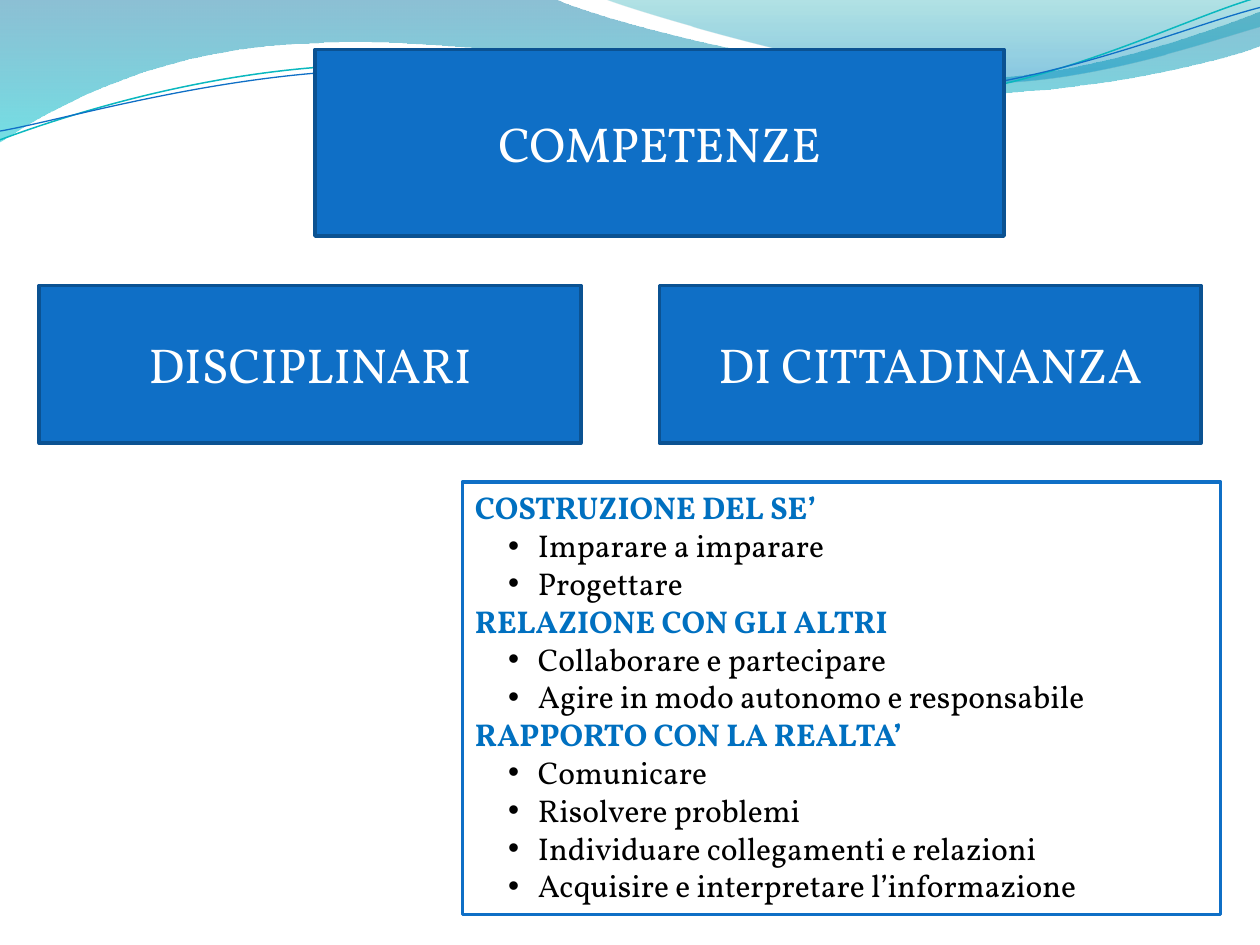
"""Build a slide that splits competences into two groups and lists the second."""
from math import cos, radians, sin
from lxml.etree import SubElement
from pptx import Presentation
from pptx.dml.color import RGBColor
from pptx.enum.shapes import MSO_SHAPE
from pptx.enum.text import MSO_ANCHOR, MSO_AUTO_SIZE, PP_ALIGN
from pptx.oxml.ns import qn
from pptx.util import Pt

FONT = "Vollkorn"
TILT = 2.7
HUES = {
    "blue": "0F6FC6", "edge": "0B5292", "head": "0070C0", "teal": "0AB8BF",
    "sea": "0074A1", "aqua": "00C6CF", "green": "00A1A9", "sky": "008BBF",
    "white": "FFFFFF", "black": "000000",
}
# Two numbers make a straight step, six make a Bezier curve.
WAVES = [
    ([(0, 0), (316.8, -0.7), (342.7, 12.2, 478.1, 45.4, 545.8, 45.4),
      (614.2, 45.4, 689.8, 18.7, 720, 6.5), (720.7, 25.9),
      (707.8, 31.7, 626.4, 54.7, 537.1, 54), (447.8, 54, 275, 20.2, 185, 24.5),
      (92.9, 25.9, 33.1, 59.8, -0.7, 81.4), (0, 0)],
     [("sea", 0, 45), ("aqua", 1, 55)]),
    ([(344.9, -0.7), (366.5, 7.9, 491, 44.6, 553.7, 46.8),
      (616.3, 49.7, 691.9, 23, 720, 15.1), (720, 0), (344.9, -0.7)],
     [("green", 0, 30), ("sky", 0.8, 45)]),
]
LINES = [
    ([(0, 79.9), (34.6, 67, 113.8, 41, 199.4, 37.4),
      (284.4, 33.8, 427, 64.1, 513.4, 57.6),
      (599.8, 51.1, 675.4, 10.8, 718.6, -1.4)], (359.3, 41.4), "teal", 0.85),
    ([(0, 74.9), (33.8, 69.1, 118.1, 43.9, 203.8, 40.3),
      (290.2, 36.7, 429.8, 60.5, 516.2, 54),
      (601.9, 48.2, 677.5, 15.1, 720, 4.3)], (359.6, 42.5), "blue", 0.75),
]
GROUPS = {
    "COSTRUZIONE DEL SE’": ["Imparare a imparare", "Progettare"],
    "RELAZIONE CON GLI ALTRI": [
        "Collaborare e partecipare", "Agire in modo autonomo e responsabile"],
    "RAPPORTO CON LA REALTA’": [
        "Comunicare", "Risolvere problemi", "Individuare collegamenti e relazioni",
        "Acquisire e interpretare l’informazione"],
}


def hue(name):
    """Return the named colour."""
    return RGBColor.from_string(HUES[name])


def pairs(step):
    """Split a step into its points."""
    return list(zip(step[::2], step[1::2]))


def turn(step, mid):
    """Turn the points of a step clockwise by the tilt."""
    c, s = cos(radians(TILT)), sin(radians(TILT))
    shifts = [(x - mid[0], y - mid[1]) for x, y in pairs(step)]
    return [n for x, y in shifts
            for n in (mid[0] + x * c - y * s, mid[1] + x * s + y * c)]


def add_path(slide, steps, close):
    """Draw an outline through straight and curved steps."""
    dots = [(Pt(x), Pt(y)) for step in steps for x, y in pairs(step)]
    pen = slide.shapes.build_freeform(*dots[0])
    pen.add_line_segments(dots[1:], close=close)
    shape = pen.convert_to_shape()
    shape.shadow.inherit = False
    legs = iter(list(shape.element.iter(qn("a:lnTo"))))
    for step in steps[1:]:
        nodes = [next(legs) for _ in pairs(step)]
        if len(nodes) == 3:
            nodes[0].addprevious(curve := nodes[0].makeelement(qn("a:cubicBezTo")))
            for node in nodes:
                curve.append(node[0])
                node.getparent().remove(node)
    return shape


def add_wave(slide, steps, stops):
    """Draw a wave filled with a see-through gradient from top to bottom."""
    wave = add_path(slide, steps, True)
    wave.line.fill.background()
    wave.fill.gradient()
    wave.fill.gradient_angle = 270
    for stop, (name, place, _) in zip(wave.fill.gradient_stops, stops):
        stop.color.rgb = hue(name)
        stop.position = place
    for node, (_, _, alpha) in zip(wave.element.iter(qn("a:gs")), stops):
        SubElement(node[0], qn("a:alpha"), val=str(alpha * 1000))


def add_line(slide, steps, mid, name, width):
    """Draw a thin, tilted curved line."""
    curve = add_path(slide, [turn(step, mid) for step in steps], False)
    curve.rotation = -TILT
    curve.fill.background()
    curve.line.color.rgb = hue(name)
    curve.line.width = Pt(width)


def style(shape, box, fill, edge):
    """Place a shape and set its fill, outline and text frame."""
    shape.left, shape.top, shape.width, shape.height = map(Pt, box)
    shape.fill.solid()
    shape.fill.fore_color.rgb = hue(fill)
    shape.line.color.rgb = hue(edge)
    shape.line.width = Pt(2)
    shape.text_frame.word_wrap = True
    shape.text_frame.auto_size = MSO_AUTO_SIZE.NONE


def set_font(para, size, name, bold=False):
    """Set the font of a paragraph."""
    font = para.font
    font.name, font.size, font.bold = FONT, Pt(size), bold
    font.color.rgb = hue(name)


def label(shape, text, box):
    """Make a shape a blue box with a centred label."""
    style(shape, box, "blue", "edge")
    frame = shape.text_frame
    frame.text = text
    frame.vertical_anchor = MSO_ANCHOR.MIDDLE
    para = frame.paragraphs[0]
    para.alignment = PP_ALIGN.CENTER
    set_font(para, 28, "white")


def add_box(slide, text, box):
    """Add a labelled rectangle."""
    shape = slide.shapes.add_shape(MSO_SHAPE.RECTANGLE, *map(Pt, box))
    shape.shadow.inherit = False
    label(shape, text, box)


def set_mark(para, mark):
    """Give a paragraph a bullet with its indent, or none."""
    props = para._p.get_or_add_pPr()
    props.set("marL", str(Pt(36 if mark else 0)))
    props.set("indent", str(Pt(-17 if mark else 0)))
    if mark:
        SubElement(props, qn("a:buFont"), typeface="Arial")
        SubElement(props, qn("a:buChar"), char="•")
    else:
        SubElement(props, qn("a:buNone"))


def fill_list(shape, groups, box):
    """Write headings with bulleted items into a framed list."""
    style(shape, box, "white", "blue")
    frame = shape.text_frame
    frame.vertical_anchor = MSO_ANCHOR.TOP
    rows = [(text, text in groups) for head in groups for text in [head, *groups[head]]]
    for i, (text, top) in enumerate(rows):
        para = frame.add_paragraph() if i else frame.paragraphs[0]
        para.text = text
        para.level = 0 if top else 1
        set_mark(para, not top)
        para.space_before = para.space_after = Pt(0)
        set_font(para, 18, "head" if top else "black", top)


def main():
    """Build the slide and save it."""
    deck = Presentation()
    deck.slide_width, deck.slide_height = Pt(720), Pt(540)
    slide = deck.slides.add_slide(deck.slide_layouts[1])
    title, body = slide.placeholders
    for wave in WAVES:
        add_wave(slide, *wave)
    for line in LINES:
        add_line(slide, *line)
    for shape in (title, body):
        slide.shapes._spTree.append(shape.element)
    label(title, "COMPETENZE", (180, 28.3, 393.8, 106.6))
    for i, text in enumerate(["DISCIPLINARI", "DI CITTADINANZA"]):
        add_box(slide, text, (22.4 + i * 354.4, 163.2, 309.6, 90))
    fill_list(body, GROUPS, (264.2, 275.5, 433.4, 247))
    deck.save("out.pptx")


if __name__ == "__main__":
    main()
